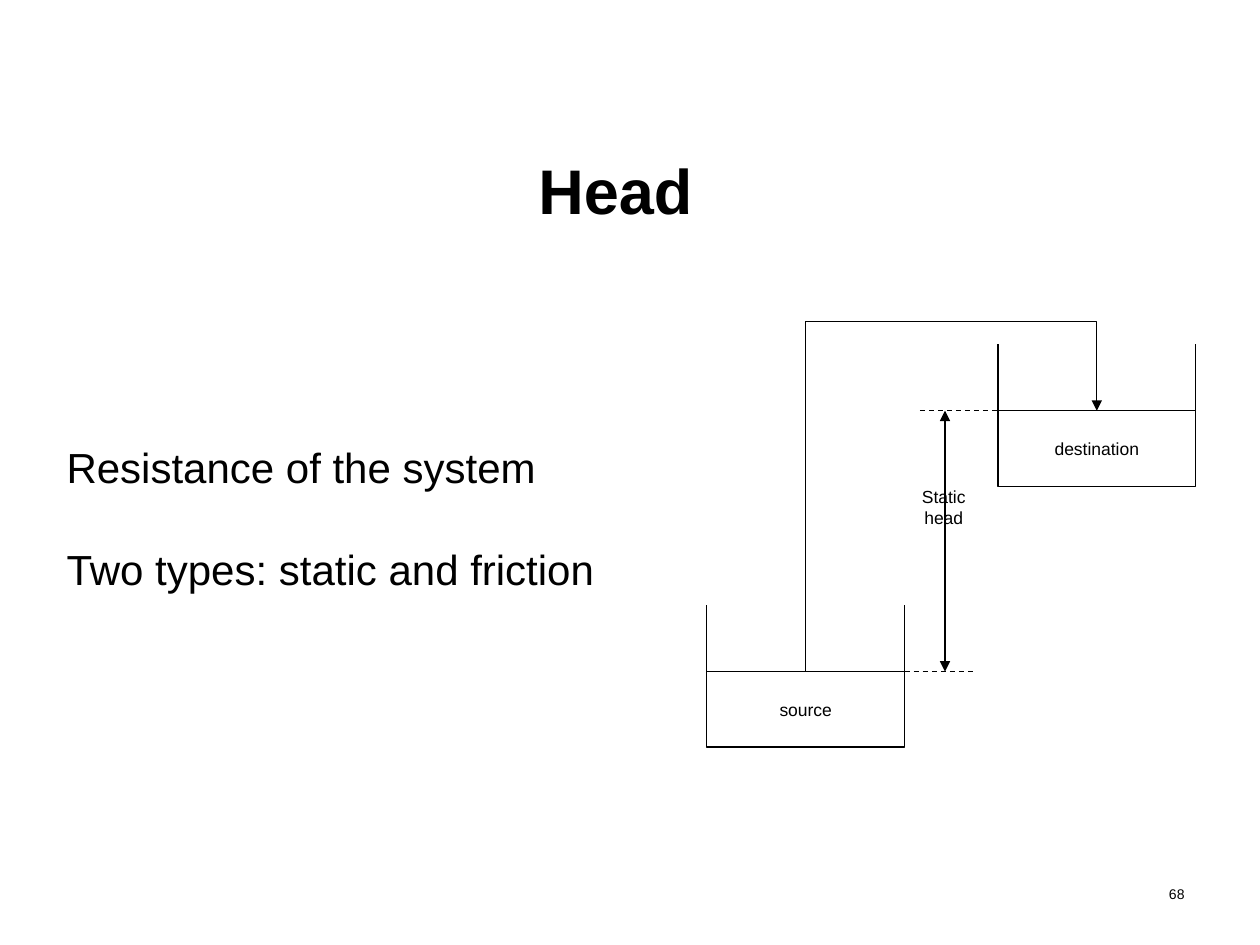
from pptx import Presentation
from pptx.dml.color import RGBColor
from pptx.enum.dml import MSO_LINE as Dash
from pptx.enum.shapes import MSO_CONNECTOR as Conn, MSO_SHAPE as Shape
from pptx.enum.text import MSO_ANCHOR as Anchor, PP_ALIGN as Align
from pptx.oxml.ns import qn
from pptx.util import Inches, Pt
from lxml.etree import SubElement as Sub

COLS, ROWS = 100, 75  # square grid cells over the slide
CELL = Inches(10) // COLS
BLACK, WHITE = "000000", "FFFFFF"
INK = 0.75
TANK_W, TANK_H, WATER = 15.7, 11.3, 6


def cells(*vals):
    return [round(v * CELL) for v in vals]


def color(code):
    return RGBColor.from_string(code)


def write(shape, text, size=10, bold=False, align=Align.CENTER,
          anchor=Anchor.TOP, pad=(0.1, 0.05), gap=0):
    frame = shape.text_frame
    frame.word_wrap = True
    frame.vertical_anchor = anchor
    frame.margin_left = frame.margin_right = Inches(pad[0])
    frame.margin_top = frame.margin_bottom = Inches(pad[1])
    frame.text = text
    for i, para in enumerate(frame.paragraphs):
        para.alignment = align
        para.space_before = Pt(gap if i else 0)
        for run in para.runs:
            font = run.font
            font.name, font.size, font.bold = "Arial", Pt(size), bold
            font.color.rgb = color(BLACK)


def label(home, box, text, **fmt):
    write(home.add_textbox(*cells(*box)), text, **fmt)


def line(home, start, end, kind=Conn.STRAIGHT, dash=None, heads=()):
    """Heads may hold "headEnd" (at start) and "tailEnd" (at end)."""
    conn = home.add_connector(kind, *cells(*start, *end))
    conn.line.width = Pt(INK)
    conn.line.color.rgb = color(BLACK)
    if dash:
        conn.line.dash_style = dash
    props = conn.line._get_or_add_ln()
    for head in heads:
        Sub(props, qn("a:" + head), type="triangle")
    Sub(conn._element.spPr, qn("a:effectLst"))
    return conn


def tank(home, box, name):
    """Open vessel: a filled lower part and two walls up to the rim."""
    x, y, w, h = box
    base = y + h
    water = home.add_shape(Shape.RECTANGLE, *cells(x, base - WATER, w, WATER))
    water.shadow.inherit = False
    water.fill.background()
    water.line.width = Pt(INK)
    water.line.color.rgb = color(BLACK)
    write(water, name, anchor=Anchor.MIDDLE, pad=(0.06, 0.03))
    for side in (x, x + w):
        line(home, (side, base), (side, y))


def pipe(home, start, end, top):
    """Elbow that rises from start to top, crosses, and drops to end."""
    (x1, y1), (x2, y2) = start, end
    rise, run = y1 - y2, x2 - x1
    mx, my = (x1 + x2) / 2, (y1 + y2) / 2
    conn = line(home, (mx - rise / 2, my - run / 2),
                (mx + rise / 2, my + run / 2), Conn.ELBOW, heads=["tailEnd"])
    props = conn._element.spPr
    props.find(qn("a:xfrm")).set("rot", str(270 * 60000))
    guides = props.find(qn("a:prstGeom")).find(qn("a:avLst"))
    bend = round((y1 - top) / rise * 100000)
    Sub(guides, qn("a:gd"), name="adj1", fmla=f"val {bend}")


def diagram(shapes, box):
    """Source at lower left, destination at upper right, head between."""
    x, y, w, h = box
    home = shapes.add_group_shape().shapes
    right, low = x + w - TANK_W, y + h - TANK_H
    high, deep = y + TANK_H - WATER, y + h - WATER
    tank(home, (right, y, TANK_W, TANK_H), "destination")
    tank(home, (x, low, TANK_W, TANK_H), "source")
    edge = x + TANK_W
    line(home, (edge, deep), (edge + 5.5, deep), dash=Dash.DASH)
    line(home, (right - 6.2, high), (right, high), dash=Dash.DASH)
    mid = x + 18.9
    line(home, (mid, high), (mid, deep), heads=("headEnd", "tailEnd"))
    label(home, (mid - 3.2, y + 11, 6.2, 5.6), "Static\nhead",
          pad=(0.06, 0.03))
    pipe(home, (x + TANK_W / 2, deep), (right + TANK_W / 2, high), y - 1.8)


def main():
    deck = Presentation()
    deck.slide_width, deck.slide_height = cells(COLS, ROWS)
    slide = deck.slides.add_slide(deck.slide_layouts[6])
    slide.background.fill.solid()
    slide.background.fill.fore_color.rgb = color(WHITE)
    shapes = slide.shapes
    label(shapes, (4.3, 34.4, 49.6, 13.4),
          "Resistance of the system\nTwo types: static and friction",
          size=24, align=Align.LEFT, anchor=Anchor.MIDDLE, gap=29.5)
    label(shapes, (71.7, 69.8, 23.3, 3.7), "68", size=8, align=Align.RIGHT)
    diagram(shapes, (56.1, 27.3, 38.8, 32))
    label(shapes, (33.5, 11.5, 30.7, 7.1), "Head", size=36, bold=True)
    deck.save("out.pptx")


if __name__ == "__main__":
    main()
